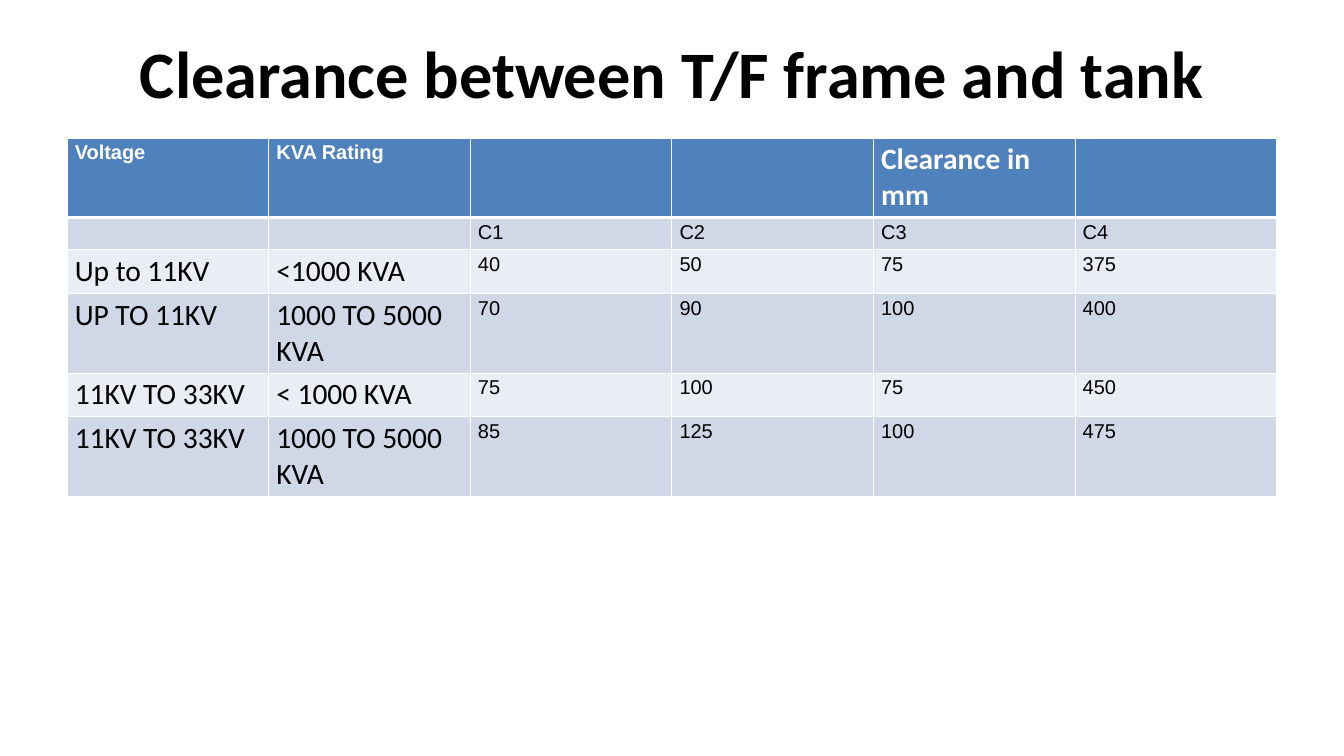
import pptx
import pptx.util
import pptx.dml.color
import pptx.enum.text
import pptx.oxml
import pptx.oxml.ns

# Content
TITLE = "Clearance between T/F frame and tank"
ROWS = [
    ("Voltage", "KVA Rating", "", "", "Clearance in mm", ""),
    ("", "", "C1", "C2", "C3", "C4"),
    ("Up to 11KV", "<1000 KVA", "40", "50", "75", "375"),
    ("UP TO 11KV", "1000 TO 5000 KVA", "70", "90", "100", "400"),
    ("11KV TO 33KV", "< 1000 KVA", "75", "100", "75", "450"),
    ("11KV TO 33KV", "1000 TO 5000 KVA", "85", "125", "100", "475"),
]
ROW_HEIGHTS = [1.05, 0.42, 0.58, 1.05, 0.58, 1.05]
HEADER, BANDS = "4F81BD", ("E9EDF4", "D0D8E8")
WHITE, BLACK = "FFFFFF", "000000"
inches = pptx.util.Inches

# Slide size in points, margins as a share of it
WIDTH, HEIGHT = pptx.util.Pt(1277), pptx.util.Pt(718)
MARGIN = int(WIDTH * 0.05)
CONTENT_WIDTH = WIDTH - 2 * MARGIN


def color(value):
    return pptx.dml.color.RGBColor.from_string(value)


def write(tf, text, size=19, font="Arial", ink=BLACK, bold=False, align=None):
    p = tf.paragraphs[0]
    p.alignment = align
    p.font.size = pptx.util.Pt(size)
    if text:
        r = p.add_run()
        r.text = text
        r.font.name, r.font.size, r.font.bold = font, pptx.util.Pt(size), bold
        r.font.color.rgb = color(ink)


def set_borders(cell, **points):
    tc_pr = cell._tc.get_or_add_tcPr()
    for i, side in enumerate("LRTB"):
        tc_pr.insert(i, pptx.oxml.parse_xml(
            f'<a:ln{side} {pptx.oxml.ns.nsdecls("a")} w="{int(pptx.util.Pt(points.get(side, 1)))}">'
            f'<a:solidFill><a:srgbClr val="{WHITE}"/></a:solidFill></a:ln{side}>'))


prs = pptx.Presentation()
prs.slide_width, prs.slide_height = WIDTH, HEIGHT
s = prs.slides.add_slide(prs.slide_layouts[6])

# Title
sp = s.shapes.add_textbox(MARGIN, int(HEIGHT * 0.04), CONTENT_WIDTH, inches(1.09))
tf = sp.text_frame
tf.word_wrap = True
tf.vertical_anchor = pptx.enum.text.MSO_ANCHOR.MIDDLE
tf.margin_left = tf.margin_right = inches(0.16)
tf.margin_top = tf.margin_bottom = inches(0.08)
write(tf, TITLE, size=63, font="Calibri", bold=True,
      align=pptx.enum.text.PP_ALIGN.CENTER)

# Clearance table
table = s.shapes.add_table(len(ROWS), len(ROWS[0]), MARGIN, inches(1.82),
                           CONTENT_WIDTH, inches(sum(ROW_HEIGHTS))).table
for column in table.columns:
    column.width = CONTENT_WIDTH // len(ROWS[0])

for i, (row, height) in enumerate(zip(ROWS, ROW_HEIGHTS)):
    table.rows[i].height = inches(height)
    for j, text in enumerate(row):
        cell = table.cell(i, j)
        cell.fill.solid()
        cell.fill.fore_color.rgb = color(BANDS[i % 2] if i else HEADER)
        set_borders(cell, T=3 if i == 1 else 1, B=3 if i == 0 else 1)
        large = j == 4 if i == 0 else i > 1 and j < 2
        write(cell.text_frame, text, size=28 if large else 19,
              font="Calibri" if large else "Arial",
              ink=BLACK if i else WHITE, bold=i == 0)

prs.save("out.pptx")
